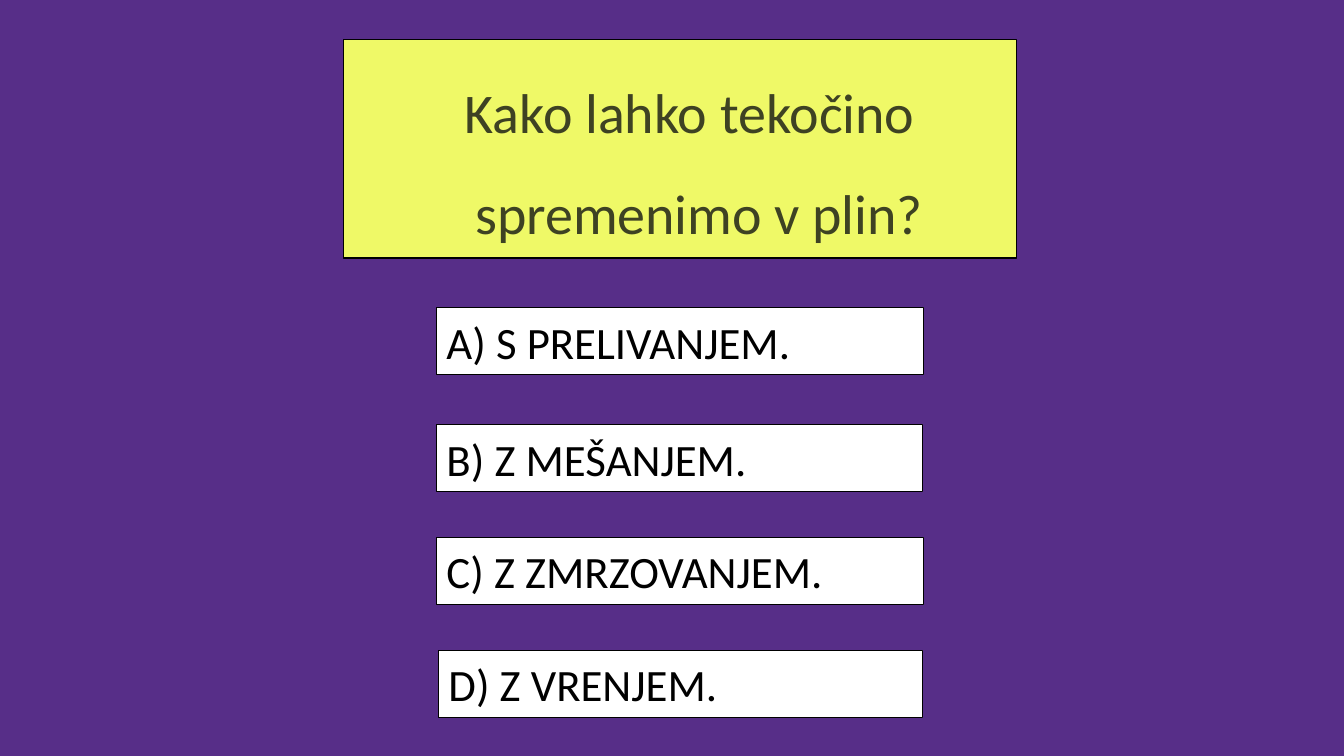
import pptx
import pptx.dml.color
import pptx.enum.shapes
import pptx.enum.text
import pptx.util

Inches = pptx.util.Inches
Pt = pptx.util.Pt
SHAPE = pptx.enum.shapes.MSO_SHAPE
ALIGN = pptx.enum.text.PP_ALIGN
ANCHOR = pptx.enum.text.MSO_ANCHOR

COLORS = {
    "back": "572E88",
    "lemon": "EFF967",
    "olive": "3E4223",
    "white": "FFFFFF",
    "black": "000000",
}

# text, left, top, width
ANSWERS = [
    ("A) S PRELIVANJEM.", 4.33, 3.05, 4.83),
    ("B) Z MEŠANJEM.", 4.33, 4.21, 4.82),
    ("C) Z ZMRZOVANJEM.", 4.33, 5.33, 4.83),
    ("D) Z VRENJEM.", 4.35, 6.45, 4.8),
]


def paint(fill, name):
    fill.solid()
    fill.fore_color.rgb = pptx.dml.color.RGBColor.from_string(COLORS[name])


def write(frame, text, size=32, color="black", align=ALIGN.LEFT,
          anchor=ANCHOR.MIDDLE, spacing=1.0, margin=0, indent=0):
    """Fill a text frame with one paragraph; margin and indent in inches."""
    frame.word_wrap = True
    frame.vertical_anchor = anchor
    para = frame.paragraphs[0]
    para.alignment = align
    para.line_spacing = spacing
    props = para._p.get_or_add_pPr()
    props.set("marL", str(Inches(margin)))
    props.set("indent", str(Inches(indent)))
    run = para.add_run()
    run.text = text
    run.font.name = "Calibri"
    run.font.size = Pt(size)
    paint(run.font.fill, color)


class Quiz:
    def __init__(self, slide):
        self.slide = slide
        self.border = Pt(0.75)
        paint(slide.background.fill, "back")

    def box(self, kind, left, top, width, height, fill):
        shape = self.slide.shapes.add_shape(
            kind, Inches(left), Inches(top), Inches(width), Inches(height))
        shape.shadow.inherit = False
        paint(shape.fill, fill)
        paint(shape.line.fill, "black")
        shape.line.width = self.border
        return shape

    def question(self, text):
        shape = self.box(SHAPE.RECTANGLE, 3.41, 0.39, 6.67, 2.17, "lemon")
        write(shape.text_frame, text, size=40, color="olive",
              align=ALIGN.CENTER, anchor=ANCHOR.TOP, spacing=1.5,
              margin=0.38, indent=-0.19)

    def answer(self, text, left, top, width):
        shape = self.box(SHAPE.ACTION_BUTTON_CUSTOM,
                         left, top, width, 0.67, "white")
        write(shape.text_frame, text)


def main():
    deck = pptx.Presentation()
    deck.slide_width = Inches(13.33)
    deck.slide_height = Inches(7.5)
    quiz = Quiz(deck.slides.add_slide(deck.slide_layouts[6]))
    quiz.question("Kako lahko tekočino spremenimo v plin?")
    for answer in ANSWERS:
        quiz.answer(*answer)
    deck.save("out.pptx")


if __name__ == "__main__":
    main()
